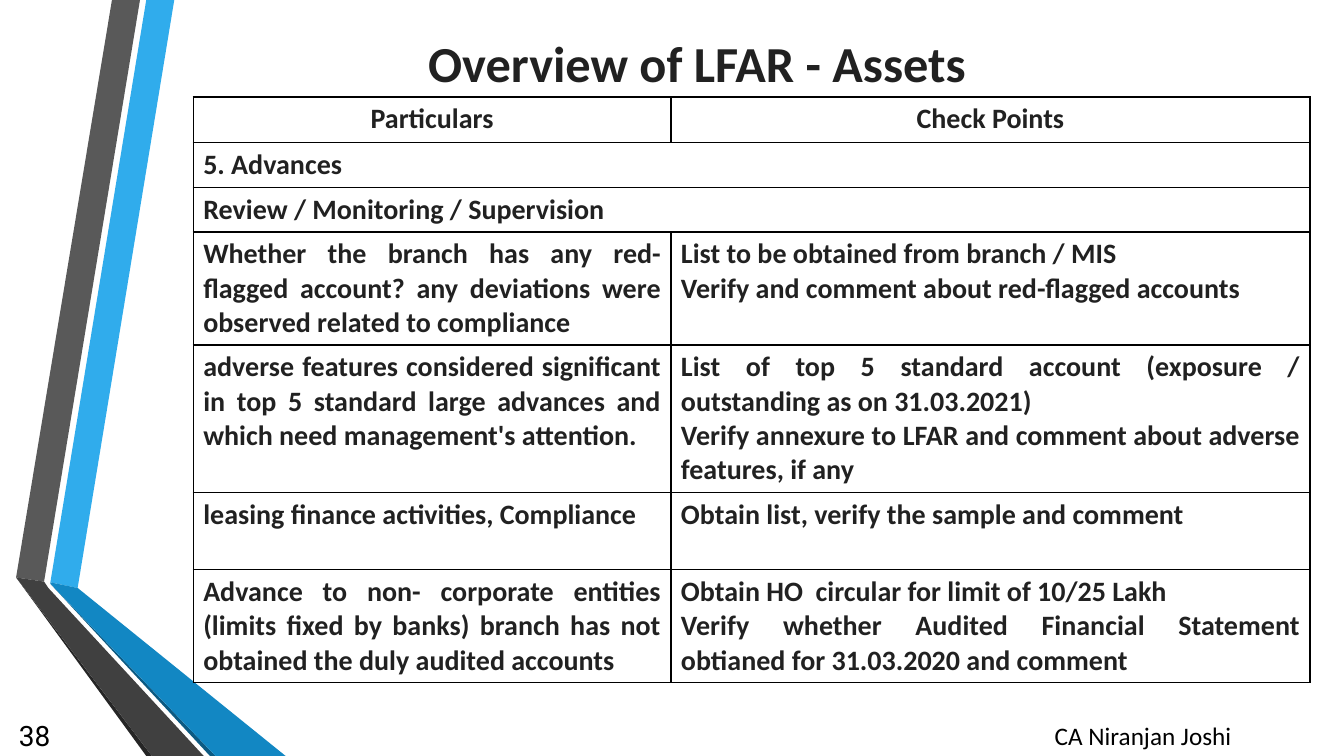
from dataclasses import dataclass

from lxml.etree import SubElement
from pptx import Presentation
from pptx.dml.color import RGBColor
from pptx.enum.text import MSO_ANCHOR, MSO_AUTO_SIZE, PP_ALIGN
from pptx.oxml.ns import qn
from pptx.util import Pt


@dataclass(frozen=True)
class Theme:
    font: str = "Calibri"
    number_font: str = "Roboto"
    ink: str = "212121"
    black: str = "000000"
    blue: str = "30ACEC"
    mid_blue: str = "1287C3"
    deep_blue: str = "0C5A82"
    grey: str = "595959"
    dark_grey: str = "404040"
    charcoal: str = "262626"
    title_size: float = 36
    body_size: float = 20
    footer_size: float = 18
    border: float = 1


class SlideBuilder:
    def __init__(self, prs, theme):
        self.theme = theme
        self.s = prs.slides.add_slide(prs.slide_layouts[5])

    def set_text(self, tf, text, size, color, align, bold=False, font=None):
        """Fill a text frame, one paragraph per line of text."""
        tf.text = text
        tf.word_wrap = True
        for p in tf.paragraphs:
            p.alignment = align
            for r in p.runs:
                r.font.size = Pt(size)
                r.font.name = font or self.theme.font
                r.font.bold = bold
                r.font.color.rgb = RGBColor.from_string(color)

    def title(self, text, left, top, width, height):
        sp = self.s.shapes.title
        sp.left, sp.top, sp.width, sp.height = map(Pt, (left, top, width, height))
        tf = sp.text_frame
        self.set_text(tf, text, self.theme.title_size, self.theme.ink, PP_ALIGN.CENTER, bold=True)
        tf.auto_size = MSO_AUTO_SIZE.NONE
        tf.vertical_anchor = MSO_ANCHOR.MIDDLE

    def textbox(self, text, box, size, align, anchor=MSO_ANCHOR.TOP, font=None):
        tf = self.s.shapes.add_textbox(*map(Pt, box)).text_frame
        self.set_text(tf, text, size, self.theme.black, align, font=font)
        tf.vertical_anchor = anchor

    def polygon(self, points, color):
        start, *rest = [(Pt(x), Pt(y)) for x, y in points]
        builder = self.s.shapes.build_freeform(*start)
        builder.add_line_segments(rest, close=True)
        sp = builder.convert_to_shape()
        sp.shadow.inherit = False
        sp.fill.solid()
        sp.fill.fore_color.rgb = RGBColor.from_string(color)
        sp.line.fill.background()

    def outline(self, cell):
        """Draw all four borders of a table cell."""
        tcPr = cell._tc.get_or_add_tcPr()
        for side in ("a:lnL", "a:lnR", "a:lnT", "a:lnB"):
            ln = SubElement(tcPr, qn(side), w=str(Pt(self.theme.border)))
            fill = SubElement(ln, qn("a:solidFill"))
            SubElement(fill, qn("a:srgbClr"), val=self.theme.black)

    def table(self, rows, left, top, col_widths, row_heights):
        """Add a table; a row with one text spans all columns, the first row is the header."""
        frame = self.s.shapes.add_table(
            len(rows), len(col_widths), Pt(left), Pt(top), Pt(sum(col_widths)), Pt(sum(row_heights)))
        table = frame.table
        table.first_row = table.horz_banding = False
        for col, width in zip(table.columns, col_widths):
            col.width = Pt(width)
        for i, (texts, height) in enumerate(zip(rows, row_heights)):
            table.rows[i].height = Pt(height)
            for cell in table.rows[i].cells:
                self.outline(cell)
                cell.fill.background()
            if len(texts) == 1:
                table.cell(i, 0).merge(table.cell(i, len(col_widths) - 1))
                align = PP_ALIGN.LEFT
            else:
                align = PP_ALIGN.JUSTIFY if i else PP_ALIGN.CENTER
            for j, text in enumerate(texts):
                self.set_text(table.cell(i, j).text_frame, text, self.theme.body_size,
                              self.theme.ink, align, bold=True)


ROWS = [
    ("Particulars", "Check Points"),
    ("5. Advances",),
    ("Review / Monitoring / Supervision",),
    ("Whether the branch has any red-flagged account? any deviations were "
     "observed related to compliance",
     "List to be obtained from branch / MIS\n"
     "Verify and comment about red-flagged accounts"),
    ("adverse features considered significant in top 5 standard large advances "
     "and which need management's attention.",
     "List of top 5 standard account (exposure / outstanding as on 31.03.2021)\n"
     "Verify annexure to LFAR and comment about adverse features, if any"),
    ("leasing finance activities, Compliance",
     "Obtain list, verify the sample and comment"),
    ("Advance to non- corporate entities (limits fixed by banks) branch has not "
     "obtained the duly audited accounts",
     "Obtain HO  circular for limit of 10/25 Lakh\n"
     "Verify whether Audited Financial Statement obtianed for 31.03.2020 and comment"),
]


def main():
    theme = Theme()
    prs = Presentation()
    prs.slide_width, prs.slide_height = Pt(960), Pt(540)
    slide = SlideBuilder(prs, theme)

    ribbons = [
        (theme.blue, [(36, 416), (55.5, 420), (124.5, 0), (104.5, 0)]),
        (theme.grey, [(100, 0), (80, 0), (11.5, 412.5), (31.5, 415.5)]),
        (theme.charcoal, [(11.5, 412.5), (104.5, 540), (108.5, 540)]),
        (theme.deep_blue, [(36, 417), (150, 540), (154, 540)]),
        (theme.mid_blue, [(36, 417), (154, 540), (204, 540), (55.5, 420), (36, 416)]),
        (theme.dark_grey, [(145.5, 540), (34.5, 420), (31.5, 415.5), (11.5, 412.5), (108.5, 540)]),
    ]
    for color, points in ribbons:
        slide.polygon(points, color)

    slide.title("Overview of LFAR - Assets", 174, 18, 648, 53.5)
    slide.table(ROWS, 138, 69.25, (341.25, 456.5), [32.4, 32.4, 27.4] + [55.4] * 4)
    slide.textbox("CA Niranjan Joshi", (690.5, 511, 252, 29), theme.footer_size, PP_ALIGN.CENTER)
    slide.textbox("38", (0, 511, 43, 29), theme.body_size, PP_ALIGN.RIGHT,
                  MSO_ANCHOR.MIDDLE, theme.number_font)
    prs.save("out.pptx")


if __name__ == "__main__":
    main()
